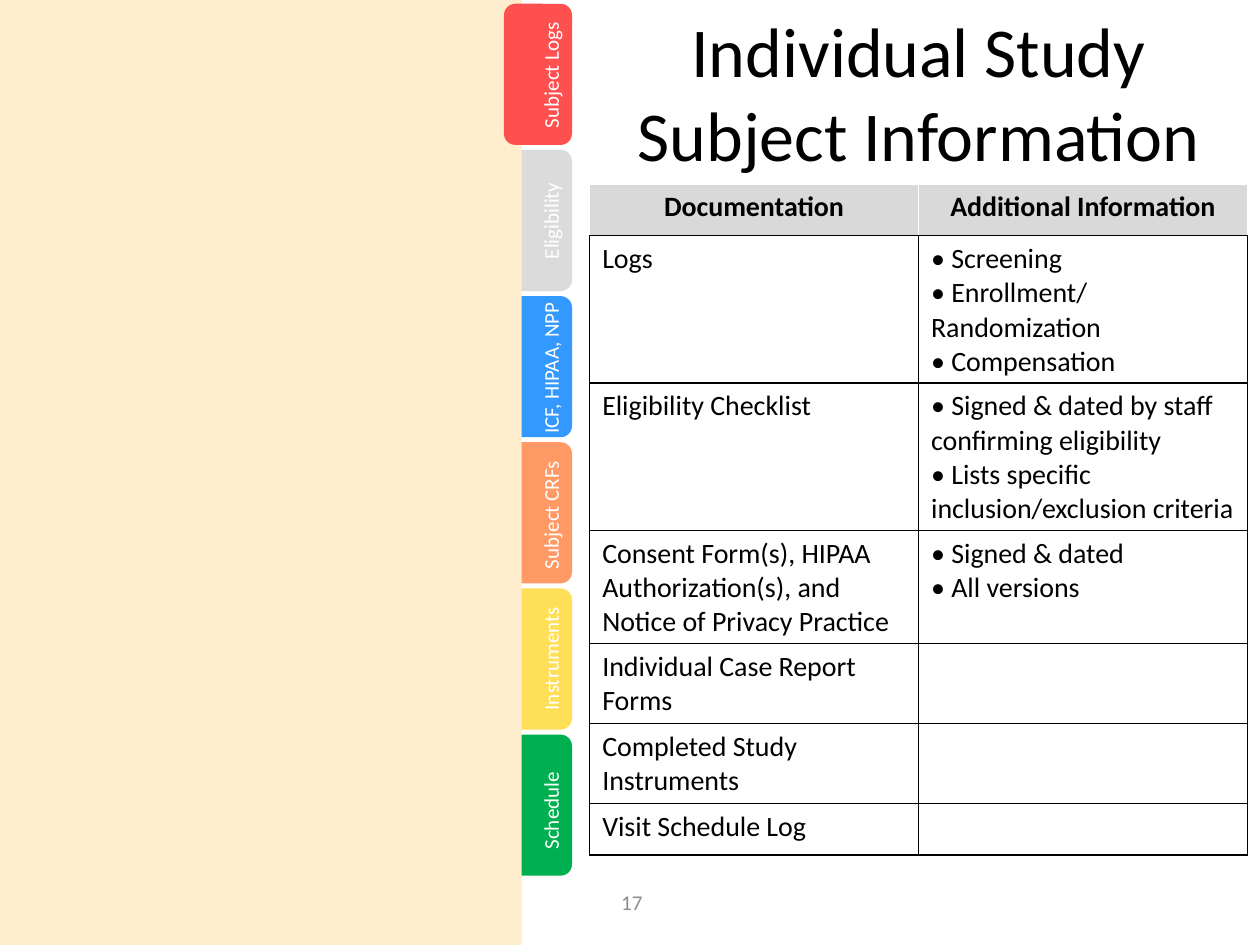
from lxml import etree
from pptx import Presentation
from pptx.dml.color import RGBColor
from pptx.enum.shapes import MSO_SHAPE as Shape
from pptx.enum.text import MSO_ANCHOR as Anchor, MSO_AUTO_SIZE as AutoSize, PP_ALIGN as Align
from pptx.oxml.ns import qn
from pptx.util import Inches, Pt

FONT = "Calibri"
BLACK, WHITE, GRAY = "000000", "FFFFFF", "8C8C8C"
HEADER_FILL, PANEL_FILL = "D9D9D9", "FEEECE"

# label, tab colour, label length, label centre (inches from the top)
TABS = [
    ("Subject Logs", "FF5050", 1.05, 0.59),
    ("Eligibility", "DBDBDB", 0.81, 1.75),
    ("ICF, HIPAA, NPP", "3399FF", 1.26, 2.91),
    ("Subject CRFs", "FF9966", 1.07, 4.08),
    ("Instruments", "FFDF57", 1.03, 5.22),
    ("Schedule", "00B050", 0.82, 6.43),
]
TAB_LEFT, TAB_TOP, TAB_WIDTH, TAB_HEIGHT, TAB_STEP = 4, 0.03, 0.54, 1.12, 1.16
LABEL_CENTER_X, LABEL_HEIGHT = 4.37, 0.3

COLUMN_WIDTH = 2.61
HEADERS = ["Documentation", "Additional Information"]
# row height, documentation, additional information
ROWS = [
    (1.17, ["Logs"],
     ["• Screening", "• Enrollment/ Randomization", "• Compensation"]),
    (1.17, ["Eligibility Checklist"],
     ["• Signed & dated by staff confirming eligibility",
      "• Lists specific inclusion/exclusion criteria"]),
    (0.9, ["Consent Form(s), HIPAA Authorization(s), and", "Notice of Privacy Practice"],
     ["• Signed & dated", "• All versions"]),
    (0.63, ["Individual Case Report Forms"], []),
    (0.63, ["Completed Study Instruments"], []),
    (0.41, ["Visit Schedule Log"], []),
]
HEADER_HEIGHT = 0.41


def rgb(color):
    return RGBColor.from_string(color)


def write(frame, lines, size=16, color=BLACK, bold=False, align=Align.LEFT):
    """Fill a text frame with one paragraph per line."""
    for index, line in enumerate(lines or [""]):
        paragraph = frame.add_paragraph() if index else frame.paragraphs[0]
        paragraph.alignment = align
        font = paragraph.font
        if line:
            run = paragraph.add_run()
            run.text = line
            font = run.font
        font.name, font.size, font.bold = FONT, Pt(size), bold
        font.color.rgb = rgb(color)


def add_text(slide, text, left, top, width, height, wrap=True, rotation=0,
             anchor=Anchor.TOP, grow=True, **text_format):
    box = slide.shapes.add_textbox(Inches(left), Inches(top), Inches(width), Inches(height))
    box.rotation = rotation
    frame = box.text_frame
    frame.word_wrap = wrap
    frame.vertical_anchor = anchor
    frame.auto_size = AutoSize.SHAPE_TO_FIT_TEXT if grow else AutoSize.NONE
    write(frame, [text], **text_format)


def add_block(slide, kind, color, left, top, width, height):
    block = slide.shapes.add_shape(kind, Inches(left), Inches(top), Inches(width), Inches(height))
    block.shadow.inherit = False
    block.fill.solid()
    block.fill.fore_color.rgb = rgb(color)
    block.line.fill.background()


def add_tab(slide, index):
    add_block(slide, Shape.ROUNDED_RECTANGLE, TABS[index][1],
              TAB_LEFT, TAB_TOP + index * TAB_STEP, TAB_WIDTH, TAB_HEIGHT)


def add_tab_label(slide, label, length, center_y):
    add_text(slide, label, LABEL_CENTER_X - length / 2, center_y - LABEL_HEIGHT / 2,
             length, LABEL_HEIGHT, wrap=False, rotation=270, size=12, color=WHITE)


def set_borders(cell, **side_colors):
    properties = cell._tc.get_or_add_tcPr()
    for side in "LRTB":
        line = etree.SubElement(properties, qn(f"a:ln{side}"), w=str(Pt(1)))
        fill = etree.SubElement(line, qn("a:solidFill"))
        etree.SubElement(fill, qn("a:srgbClr"), val=side_colors.get(side, BLACK))


def add_documentation_table(slide, left, top):
    heights = [HEADER_HEIGHT] + [row[0] for row in ROWS]
    table = slide.shapes.add_table(
        len(heights), len(HEADERS), Inches(left), Inches(top),
        Inches(COLUMN_WIDTH * len(HEADERS)), Inches(sum(heights))).table
    table.horz_banding = False
    for column in table.columns:
        column.width = Inches(COLUMN_WIDTH)
    for row, height in zip(table.rows, heights):
        row.height = Inches(height)

    for column, header in enumerate(HEADERS):
        cell = table.cell(0, column)
        set_borders(cell, L=WHITE, R=WHITE, T=WHITE)
        cell.fill.solid()
        cell.fill.fore_color.rgb = rgb(HEADER_FILL)
        write(cell.text_frame, [header], bold=True, align=Align.CENTER)
    for row, (_, *contents) in enumerate(ROWS, start=1):
        for column, lines in enumerate(contents):
            cell = table.cell(row, column)
            set_borders(cell)
            cell.fill.background()
            write(cell.text_frame, lines)


def main():
    deck = Presentation()
    deck.slide_width, deck.slide_height = Inches(10), Inches(7.5)
    slide = deck.slides.add_slide(deck.slide_layouts[6])

    # The panel covers the left edge of every tab but the active first one.
    for index in reversed(range(1, len(TABS))):
        add_tab(slide, index)
    add_text(slide, "17", 4.68, 6.96, 0.67, 0.4, anchor=Anchor.MIDDLE, grow=False,
             size=12, color=GRAY, align=Align.CENTER)
    add_block(slide, Shape.RECTANGLE, PANEL_FILL, 0, 0, 4.14, 7.5)
    add_text(slide, "Individual Study Subject Information", 4.58, 0.01, 5.42, 1.45,
             size=40, align=Align.CENTER)
    add_tab(slide, 0)
    for label, _, length, center_y in TABS:
        add_tab_label(slide, label, length, center_y)
    add_documentation_table(slide, 4.68, 1.46)

    deck.save("out.pptx")


if __name__ == "__main__":
    main()
